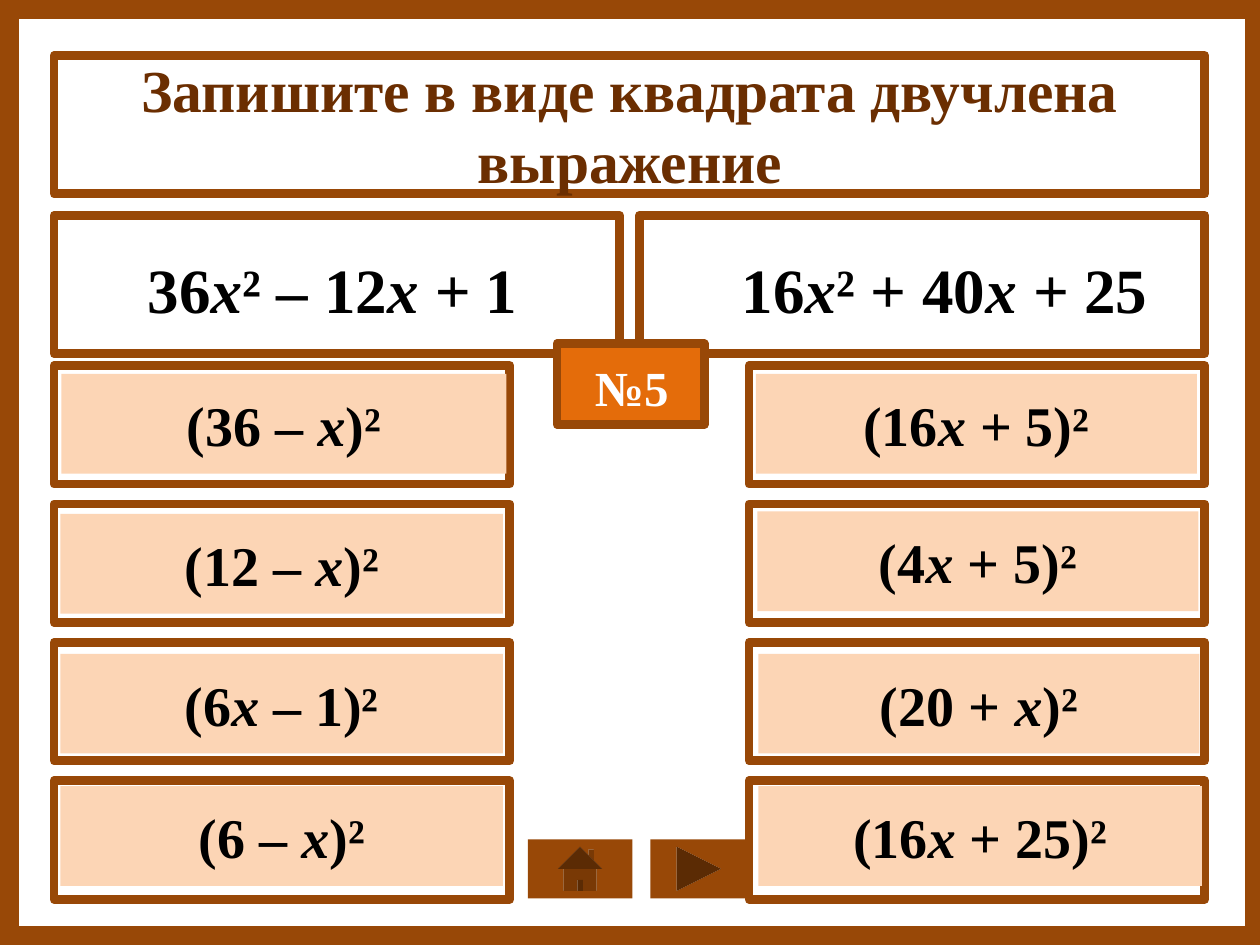
from pptx import Presentation
from pptx.util import Cm, Pt
from pptx.dml.color import RGBColor
from pptx.enum import shapes, text

KIND = shapes.MSO_SHAPE
THEME = {
    "font": "Times New Roman",
    "white": "FFFFFF", "black": "000000", "brown": "984807",
    "dark": "6B2E01", "peach": "FCD5B5", "orange": "E46C0A",
    "title": 34, "task": 36, "answer": 32, "badge": 28, "border": 5,
}

# Content: *...* marks italics
TITLE = "Запишите в виде квадрата двучлена выражение"
BADGE = "№5"
TASKS = [  # text, left, width
    ("36*х*² – 12*х + *1", 2.69, 8.03),
    ("16*х*² + 40*х +* 25", 14.66, 8.76),
]
ANSWERS = [  # text, left, top, width
    ("(36 – *х*)²", 1.24, 7.54, 8.97),
    ("(12 – *х*)²", 1.22, 10.36, 8.92),
    ("(6*х *– 1)²", 1.22, 13.18, 8.92),
    ("(6 – *х*)²", 1.22, 15.85, 8.92),
    ("(16*х *+ 5)²", 15.24, 7.54, 8.89),
    ("(4*х* + 5)²", 15.27, 10.31, 8.89),
    ("(20 + *х*)²", 15.29, 13.18, 8.89),
    ("(16*х* + 25)²", 15.29, 15.85, 8.94),
]

# Grid of panels, in centimetres
LEFT, RIGHT = 1.09, 24.29
ROW, STEP = 7.37, 2.79
CELL = (9.19, 2.39)
HEAD = (11.4, 2.79)

prs = Presentation()
prs.slide_width, prs.slide_height = Cm(25.4), Cm(19.05)
slide = prs.slides.add_slide(prs.slide_layouts[5])


def color(name):
    return RGBColor.from_string(THEME[name])


def block(box, fill, border=False, kind=KIND.RECTANGLE):
    shape = slide.shapes.add_shape(kind, *map(Cm, box))
    shape.shadow.inherit = False
    shape.fill.solid()
    shape.fill.fore_color.rgb = color(fill)
    if border:
        shape.line.color.rgb = color("brown")
        shape.line.width = Pt(THEME["border"])
    else:
        shape.line.fill.background()
    return shape


def write(shape, words, size, ink="black", wrap=True, middle=False):
    frame = shape.text_frame
    frame.word_wrap = wrap
    frame.auto_size = text.MSO_AUTO_SIZE.NONE
    frame.vertical_anchor = (text.MSO_ANCHOR.MIDDLE if middle
                             else text.MSO_ANCHOR.TOP)
    para = frame.paragraphs[0]
    para.alignment = text.PP_ALIGN.CENTER
    font = para.font
    font.name, font.size, font.bold = THEME["font"], Pt(THEME[size]), True
    font.color.rgb = color(ink)
    for i, part in enumerate(words.split("*")):
        if part:
            run = para.add_run()
            run.text = part
            if i % 2:
                run.font.italic = True


def label(box, words, size, ink="black"):
    write(slide.shapes.add_textbox(*map(Cm, box)), words, size, ink, wrap=False)


# Background and white panels
block((0.74, 0.74, 24, 17.6), "white")
block((LEFT, 1.12, RIGHT - LEFT, 2.79), "white", True)
for left in (LEFT, RIGHT - HEAD[0]):
    block((left, 4.34, *HEAD), "white", True)
for left in (LEFT, RIGHT - CELL[0]):
    for i in range(4):
        block((left, ROW + i * STEP, *CELL), "white", True)

# Number badge and outer frame
block((11.23, 6.93, 2.97, 1.63), "orange", True)
edge = block((0, 0, 25.48, 19.05), "brown", kind=KIND.FRAME)
edge.adjustments[0] = 0.02
label((11.73, 7.09, 2.01, 1.45), BADGE, "badge", "white")

# Title, raised above its panel
title = slide.shapes.title
title.left, title.top, title.width, title.height = map(
    Cm, (1.12, 0.94, 23.16, 3.18))
write(title, TITLE, "title", "dark")
slide.shapes._spTree.append(title._element)

# Navigation buttons
block((13.11, 16.92, 1.96, 1.19), "brown",
      kind=KIND.ACTION_BUTTON_FORWARD_OR_NEXT)
block((10.64, 16.92, 2.11, 1.19), "brown", kind=KIND.ACTION_BUTTON_HOME)

# Tasks and answers
for words, left, width in TASKS:
    label((left, 4.93, width, 1.8), words, "task")
for words, left, top, width in ANSWERS:
    write(block((left, top, width, 2.01), "peach"), words, "answer",
          middle=True)

prs.save("out.pptx")
